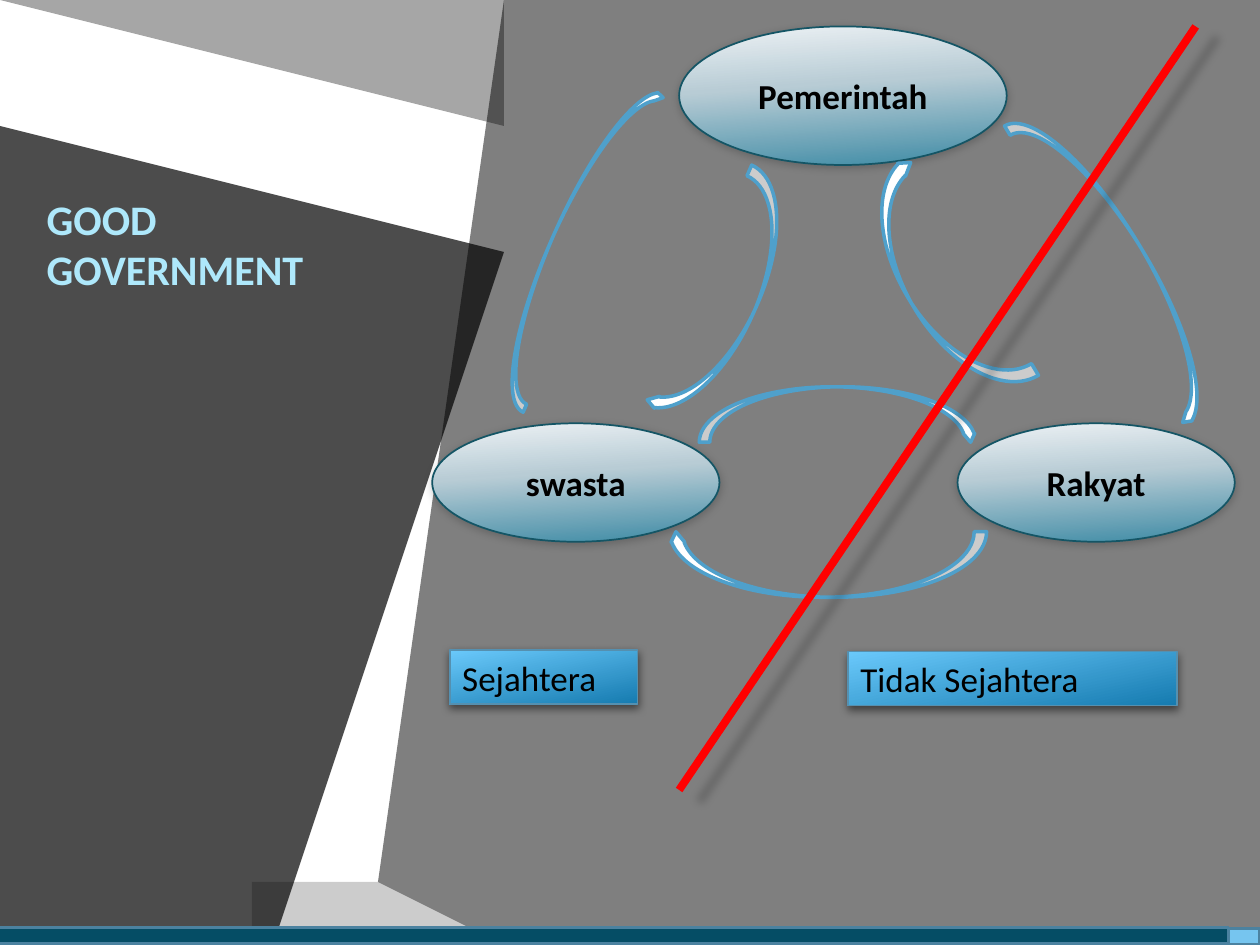
from lxml.etree import SubElement
from pptx import Presentation
from pptx.dml.color import RGBColor
from pptx.enum.shapes import MSO_CONNECTOR, MSO_SHAPE
from pptx.enum.text import MSO_ANCHOR, PP_ALIGN
from pptx.oxml.ns import qn
from pptx.util import Inches, Pt

FONT = "Calibri"
GLOSS = [(0, "EDF2F5"), (42, "B8CCD5"), (100, "3E8BA5")]
BLUE = [(0, "6AC9FB"), (100, "167BB0")]

# Each panel: black opacity and outline; six numbers make a Bezier curve
PANELS = [
    (70, [(0, 0.53), (3.72, 1.53), (3.77, 1.55, 3.8, 1.6, 3.79, 1.64),
          (2.22, 7.5), (0, 7.5)]),
    (35, [(0, 0), (4.23, 0), (3.86, 1.37), (3.85, 1.42, 3.8, 1.45, 3.75, 1.44),
          (0, 0.43)]),
    (20, [(2.31, 7.5), (2.44, 7.02), (2.45, 6.99, 2.48, 6.96, 2.51, 6.96),
          (2.55, 6.96), (4.55, 7.5)]),
    (50, [(4.33, 0), (10, 0), (10, 7.5), (4.95, 7.5), (2.59, 6.87),
          (2.54, 6.86, 2.51, 6.81, 2.52, 6.76)]),
]
ACTORS = [("Pemerintah", (5.39, 0.21, 2.6, 1.1)),
          ("swasta", (3.43, 3.36, 2.28, 0.94)),
          ("Rakyat", (7.6, 3.36, 2.2, 0.94))]
# Each arrow: box, rotation, width of the band
ARROWS = [((7.48, 1.87, 2.79, 0.43), 59, 0.2),
          ((3.17, 1.76, 2.77, 0.35), 294, 0.2),
          ((5.31, 4.22, 2.52, 0.52), 180, 0.19),
          ((6.46, 1.97, 2.03, 0.57), 239, 0.19),
          ((5.55, 3.07, 2.2, 0.44), 0, 0.19),
          ((4.72, 2.12, 2.09, 0.49), 114, 0.19)]
OUTCOMES = [("Sejahtera", (3.57, 5.16, 1.49, 0.43)),
            ("Tidak Sejahtera", (6.73, 5.17, 2.61, 0.43))]


def color(value):
    return RGBColor.from_string(value)


def inches(box):
    return [Inches(length) for length in box]


def add_color(parent, value, opacity=100):
    element = SubElement(parent, qn("a:srgbClr"), val=value)
    if opacity < 100:
        SubElement(element, qn("a:alpha"), val=str(opacity * 1000))


def set_gradient(shape, stops, angle):
    shape.fill.gradient()
    gradient = shape._element.spPr.find(qn("a:gradFill"))
    for child in list(gradient):
        gradient.remove(child)
    stop_list = SubElement(gradient, qn("a:gsLst"))
    for position, value in stops:
        add_color(SubElement(stop_list, qn("a:gs"), pos=str(position * 1000)), value)
    SubElement(gradient, qn("a:lin"), ang=str(angle * 60000), scaled="0")


def set_shadow(shape, opacity, distance, direction=90):
    effects = SubElement(shape._element.spPr, qn("a:effectLst"))
    shadow = SubElement(effects, qn("a:outerShdw"), blurRad=str(Pt(5)),
                        dist=str(Pt(distance)), dir=str(direction * 60000),
                        rotWithShape="0")
    add_color(shadow, "000000", opacity)


def add_shape(slide, kind, box, line, width, fill=None):
    shape = slide.shapes.add_shape(kind, *inches(box))
    shape.line.color.rgb = color(line)
    shape.line.width = Pt(width)
    if fill:
        shape.shadow.inherit = False
        shape.fill.solid()
        shape.fill.fore_color.rgb = color(fill)
    return shape


def set_text(shape, text, size, value, bold, align, anchor):
    frame = shape.text_frame
    frame.word_wrap = True
    frame.vertical_anchor = anchor
    frame.text = text
    paragraph = frame.paragraphs[0]
    paragraph.alignment = align
    paragraph.font.name = FONT
    paragraph.font.size = Pt(size)
    paragraph.font.bold = bold
    paragraph.font.color.rgb = color(value)


def curve_points(start, curve, steps=6):
    points = [start, curve[:2], curve[2:4], curve[4:]]
    for step in range(1, steps + 1):
        t = step / steps
        weights = ((1 - t) ** 3, 3 * t * (1 - t) ** 2, 3 * t * t * (1 - t), t ** 3)
        yield tuple(sum(w * p[axis] for w, p in zip(weights, points))
                    for axis in (0, 1))


def add_panel(slide, opacity, outline):
    points = [outline[0]]
    for part in outline[1:]:
        points.extend([part] if len(part) == 2 else curve_points(points[-1], part))
    builder = slide.shapes.build_freeform(*points[0], scale=Inches(1))
    builder.add_line_segments(points[1:], close=True)
    panel = builder.convert_to_shape()
    panel.shadow.inherit = False
    panel.line.fill.background()
    panel.fill.solid()
    panel.fill.fore_color.rgb = color("000000")
    black = panel._element.spPr.find(qn("a:solidFill"))[0]
    SubElement(black, qn("a:alpha"), val=str(opacity * 1000))


def add_title(slide, box):
    title = slide.shapes.title
    title.left, title.top, title.width, title.height = inches(box)
    set_text(title, "GOOD GOVERNMENT", 24, "AEE8FB", True, PP_ALIGN.LEFT,
             MSO_ANCHOR.MIDDLE)
    # Bring the title in front of the panels
    title._element.getparent().append(title._element)


def add_actor(slide, name, box):
    ellipse = add_shape(slide, MSO_SHAPE.OVAL, box, "145565", 1)
    set_gradient(ellipse, GLOSS, 86)
    set_shadow(ellipse, 20, 1)
    set_text(ellipse, name, 20, "000000", True, PP_ALIGN.CENTER, MSO_ANCHOR.MIDDLE)


def add_arrow(slide, box, rotation, band):
    arrow = add_shape(slide, MSO_SHAPE.CURVED_DOWN_ARROW, box, "4FA0CB", 2, "FFFFFF")
    arrow.rotation = rotation
    for index, value in enumerate((band, 0.21, 0.16)):
        arrow.adjustments[index] = value


def add_divider(slide, start, end):
    divider = slide.shapes.add_connector(MSO_CONNECTOR.STRAIGHT,
                                         *inches(start + end))
    divider.line.color.rgb = color("FF0000")
    divider.line.width = Pt(4.5)
    set_shadow(divider, 20, 13, 28)


def add_outcome(slide, text, box):
    label = add_shape(slide, MSO_SHAPE.RECTANGLE, box, "5590B0", 1)
    set_gradient(label, BLUE, 78)
    set_shadow(label, 50, 2)
    set_text(label, text, 20, "000000", False, PP_ALIGN.LEFT, MSO_ANCHOR.TOP)


def add_footer_bars(slide):
    for box, fill in (((0, 7.37, 10, 0.13), "76C5EF"),
                      ((-0.01, 7.36, 9.76, 0.13), "054D65")):
        add_shape(slide, MSO_SHAPE.RECTANGLE, box, "4B82A0", 2, fill)


def main():
    presentation = Presentation()
    presentation.slide_width, presentation.slide_height = Inches(10), Inches(7.5)
    slide = presentation.slides.add_slide(presentation.slide_layouts[5])

    # Background panels and title
    for opacity, outline in PANELS:
        add_panel(slide, opacity, outline)
    add_title(slide, (0.27, 1.31, 3.08, 1.25))

    # Actors and the arrows between them
    for name, box in ACTORS:
        add_actor(slide, name, box)
    for box, rotation, band in ARROWS:
        add_arrow(slide, box, rotation, band)

    # Divider, outcomes and footer
    add_divider(slide, (9.49, 0.21), (5.39, 6.27))
    for text, box in OUTCOMES:
        add_outcome(slide, text, box)
    add_footer_bars(slide)
    presentation.save("out.pptx")


if __name__ == "__main__":
    main()
